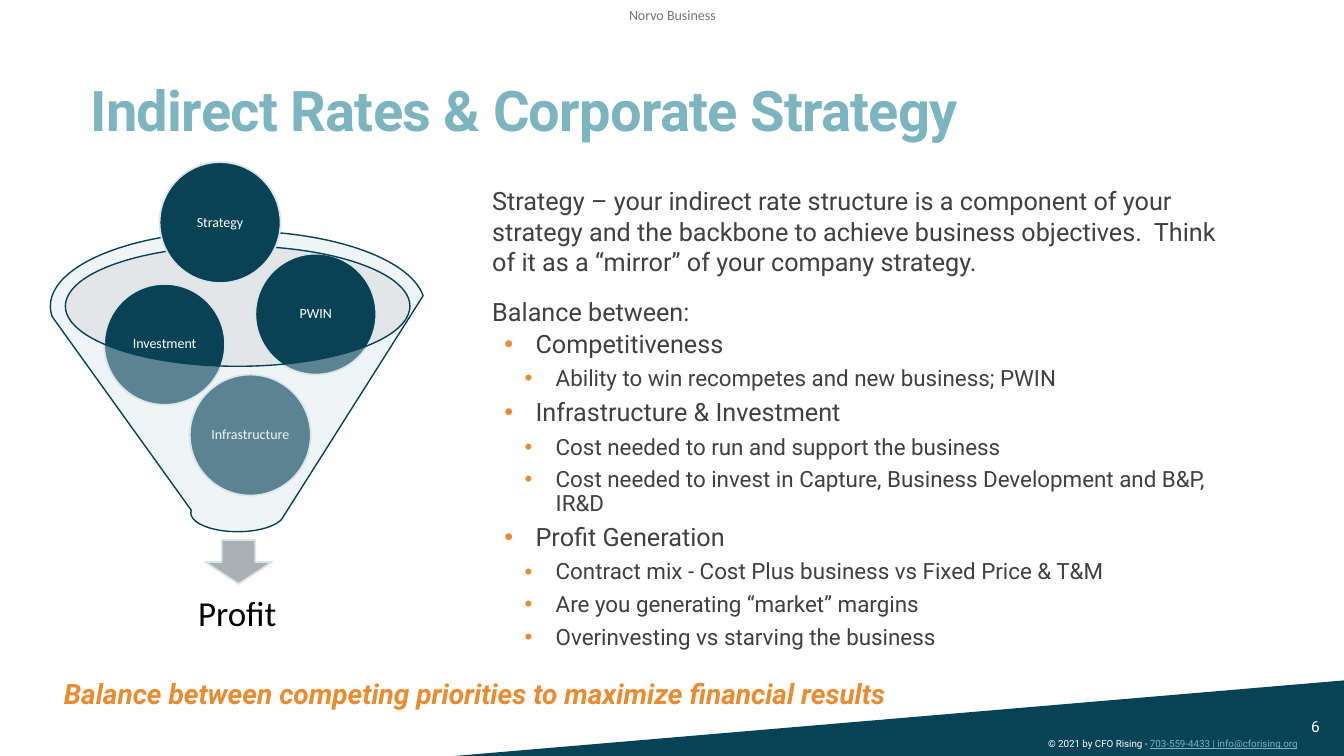
from lxml import etree
from pptx import Presentation
from pptx import util as u
from pptx.dml.color import RGBColor
from pptx.enum import shapes, text
from pptx.oxml import ns

COLUMNS, ROWS = 16, 9
CELL = u.Inches(7.5) / ROWS
NAVY, TEAL, ORANGE, PALE = "094255", "7CB4C0", "EB8B30", "D7E6EB"
WHITE, BLACK, CHARCOAL, GREY = "FFFFFF", "000000", "404040", "737373"
MIDDLE, CENTER = text.MSO_ANCHOR.MIDDLE, text.PP_ALIGN.CENTER

# Left and top of each ball, in grid cells
FUNNEL_BALLS = [("Infrastructure", 2.26, 4.46), ("Investment", 1.24, 3.38), ("PWIN", 3.04, 3.02)]
TOP_BALL = ("Strategy", 1.9, 1.93)

# Level and wording of each paragraph
POINTS = [
    (0, "Strategy – your indirect rate structure is a component of your strategy and the backbone "
        "to achieve business objectives.  Think of it as a “mirror” of your company strategy."),
    (0, "Balance between:"),
    (1, "Competitiveness"),
    (2, "Ability to win recompetes and new business; PWIN"),
    (1, "Infrastructure & Investment"),
    (2, "Cost needed to run and support the business"),
    (2, "Cost needed to invest in Capture, Business Development and B&P, IR&D"),
    (1, "Profit Generation"),
    (2, "Contract mix - Cost Plus business vs Fixed Price & T&M"),
    (2, "Are you generating “market” margins"),
    (2, "Overinvesting vs starving the business"),
]
# Left margin in inches and text size of each level
LEVELS = [(0.1, 18), (0.53, 18), (0.73, 16)]


def grid(*cells):
    return [u.Emu(round(cell * CELL)) for cell in cells]


def color(value):
    return RGBColor.from_string(value)


def style(font, size, shade, name="Roboto", bold=False, italic=False):
    font.size, font.name = u.Pt(size), name
    font.bold, font.italic = bold, italic
    font.color.rgb = color(shade)


def set_frame(frame, anchor=text.MSO_ANCHOR.TOP, side=0.1, end=0.05):
    """Wrap the text and set its anchor and insets in inches."""
    frame.word_wrap = True
    frame.auto_size = text.MSO_AUTO_SIZE.NONE
    frame.vertical_anchor = anchor
    frame.margin_left = frame.margin_right = u.Inches(side)
    frame.margin_top = frame.margin_bottom = u.Inches(end)


def place(item, cells):
    item.left, item.top, item.width, item.height = grid(*cells)


def add_label(page, cells, wording, size, shade, align=text.PP_ALIGN.LEFT,
              anchor=text.MSO_ANCHOR.TOP, side=0.1, **font):
    box = page.shapes.add_textbox(*grid(*cells))
    set_frame(box.text_frame, anchor, side)
    para = box.text_frame.paragraphs[0]
    para.text, para.alignment = wording, align
    style(para.runs[0].font, size, shade, **font)
    return para


def add_figure(page, kind, cells, fill, line=None, weight=1.25, opacity=None):
    figure = page.shapes.add_shape(kind, *grid(*cells))
    figure.shadow.inherit = False
    figure.fill.solid()
    figure.fill.fore_color.rgb = color(fill)
    if opacity:
        shade = figure._element.spPr.find(".//" + ns.qn("a:srgbClr"))
        etree.SubElement(shade, ns.qn("a:alpha"), val=str(opacity * 1000))
    if line:
        figure.line.color.rgb = color(line)
        figure.line.width = u.Pt(weight)
    else:
        figure.line.fill.background()
    return figure


def add_ball(page, wording, left, top):
    ball = add_figure(page, shapes.MSO_SHAPE.OVAL, (left, top, 1.44, 1.44), NAVY, PALE)
    set_frame(ball.text_frame, MIDDLE, 0.01, 0.01)
    para = ball.text_frame.paragraphs[0]
    para.text, para.alignment, para.line_spacing = wording, CENTER, 0.9
    style(para.runs[0].font, 10, WHITE, "Calibri")


def add_funnel(page):
    kinds = shapes.MSO_SHAPE
    add_figure(page, kinds.OVAL, (0.77, 2.93, 4.12, 1.43), "BDC0C3", opacity=40)
    add_figure(page, kinds.DOWN_ARROW, (2.44, 6.43, 0.8, 0.52), "ABB0B4", PALE)
    profit = add_label(page, (0.91, 6.84, 3.83, 0.96), "Profit", 25, BLACK, CENTER, MIDDLE, name="Calibri")
    profit.line_spacing = 0.9
    for ball in FUNNEL_BALLS:
        add_ball(page, *ball)
    add_figure(page, kinds.FUNNEL, (0.6, 2.75, 4.46, 3.58), PALE, NAVY, 1, 40)
    add_ball(page, *TOP_BALL)


def set_bullet(para, level):
    """Indent the paragraph and give the lower levels an orange dot."""
    props = para._p.get_or_add_pPr()
    props.set("marL", str(u.Inches(LEVELS[level][0])))
    props.set("indent", str(u.Inches(-0.31 if level else 0)))
    if level:
        tint = etree.SubElement(props, ns.qn("a:buClr"))
        etree.SubElement(tint, ns.qn("a:srgbClr"), val=ORANGE)
        etree.SubElement(props, ns.qn("a:buFont"), typeface="Arial")
        etree.SubElement(props, ns.qn("a:buChar"), char="•")
    else:
        etree.SubElement(props, ns.qn("a:buNone"))


def fill_title(title):
    place(title, (0.96, 0.67, 13.38, 1.09))
    set_frame(title.text_frame, text.MSO_ANCHOR.BOTTOM)
    para = title.text_frame.paragraphs[0]
    para.text = "Indirect Rates & Corporate Strategy"
    para.alignment, para.line_spacing = text.PP_ALIGN.LEFT, 0.85
    span = para.runs[0]
    style(span.font, 40, TEAL, bold=True)
    span._r.get_or_add_rPr().set("spc", "-50")


def fill_body(body):
    place(body, (5.74, 2.15, 9.01, 5.84))
    frame = body.text_frame
    set_frame(frame, side=0)
    for index, (level, wording) in enumerate(POINTS):
        para = frame.add_paragraph() if index else frame.paragraphs[0]
        para.text, para.level = wording, level
        set_bullet(para, level)
        para.line_spacing = 0.9 if level else 1.0
        para.space_before = u.Pt(0 if index == 0 else 2 if level else 12)
        para.space_after = u.Pt(4 if level else 2)
        style(para.runs[0].font, LEVELS[level][1], CHARCOAL)


def add_footer(page):
    wedge = add_figure(page, shapes.MSO_SHAPE.RIGHT_TRIANGLE, (5.41, 8.1, COLUMNS - 5.41, 0.9), "074356")
    wedge._element.spPr.get_or_add_xfrm().set("flipH", "1")
    notice = add_label(page, (12.36, 8.72, 3.48, 0.28), "© 2021 by CFO Rising - ", 7, WHITE)
    contact = notice.add_run()
    contact.text = "703-559-4433 | info@cforising.org"
    style(contact.font, 7, TEAL)
    contact.font.underline = True
    add_label(page, (15.49, 8.41, 0.5, 0.48), "6", 11, WHITE, anchor=MIDDLE)


def main():
    deck = Presentation()
    deck.slide_width, deck.slide_height = grid(COLUMNS, ROWS)
    page = deck.slides.add_slide(deck.slide_layouts[1])
    add_label(page, (7.32, 0, 1.37, 0.35), "Norvo Business", 10, GREY, CENTER, MIDDLE, 0, name="Calibri")
    add_footer(page)
    fill_title(page.shapes.title)
    add_label(page, (0.76, 7.99, 14.5, 0.6),
              "Balance between competing priorities to maximize financial results",
              20, ORANGE, side=0, bold=True, italic=True)
    fill_body(page.placeholders[1])
    add_funnel(page)
    deck.save("out.pptx")


if __name__ == "__main__":
    main()
